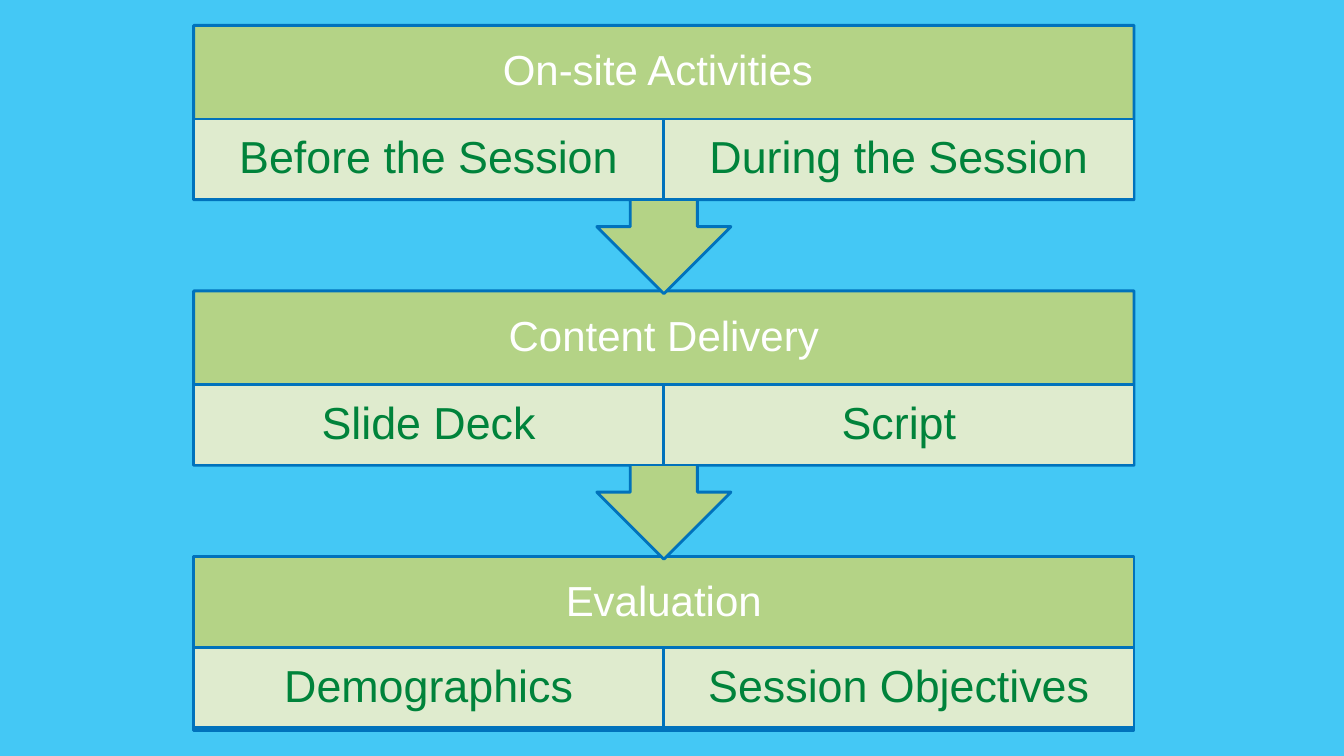
from lxml import etree
from pptx import Presentation
from pptx.dml.color import RGBColor
from pptx.enum.shapes import MSO_SHAPE
from pptx.enum.text import MSO_ANCHOR, PP_ALIGN
from pptx.oxml.ns import qn
from pptx.util import Cm, Pt

RECTANGLE = MSO_SHAPE.RECTANGLE
CALLOUT = MSO_SHAPE.UP_ARROW_CALLOUT
MIDDLE = MSO_ANCHOR.MIDDLE
CENTER = PP_ALIGN.CENTER

LEFT, WIDTH = 4.88, 23.7
TOP, STEP = 0.64, 6.69
HEADING_HEIGHT, CELL_HEIGHT = 2.36, 2.03
CALLOUT_HEIGHT, LAST_HEIGHT = 6.76, 4.39
LAST_CELL_OFFSET = 2.29

STAGES = [
    ("On-site Activities ", ("Before the Session", "During the Session")),
    ("Content Delivery", ("Slide Deck", "Script")),
    ("Evaluation", ("Demographics", "Session Objectives")),
]


def color(code):
    return RGBColor.from_string(code)


class FlowSlide:
    font = "Arial"
    background = "44C8F5"
    stage_fill = "B4D386"
    cell_fill = "E5EED7"
    cell_opacity = 89
    outline = "0072BC"
    heading_color = "FFFFFF"
    cell_color = "00833B"

    def __init__(self, deck):
        self.page = deck.slides.add_slide(deck.slide_layouts[6])
        fill = self.page.background.fill
        fill.solid()
        fill.fore_color.rgb = color(self.background)

    def shape(self, kind, left, top, width, height, fill):
        box = self.page.shapes.add_shape(
            kind, Cm(left), Cm(top), Cm(width), Cm(height))
        box.shadow.inherit = False
        box.fill.solid()
        box.fill.fore_color.rgb = color(fill)
        box.line.color.rgb = color(self.outline)
        box.line.width = Pt(2)
        return box

    def label(self, box, text, size, text_color, side, edge):
        frame = box.text_frame
        frame.word_wrap = True
        frame.vertical_anchor = MIDDLE
        frame.margin_left = frame.margin_right = Cm(side)
        frame.margin_top = frame.margin_bottom = Cm(edge)
        para = frame.paragraphs[0]
        para.alignment = CENTER
        para.line_spacing = 0.9
        span = para.add_run()
        span.text = text
        span.font.name = self.font
        span.font.size = Pt(size)
        span.font.color.rgb = color(text_color)

    def callout(self, top):
        box = self.shape(CALLOUT, LEFT, top, WIDTH, CALLOUT_HEIGHT, self.stage_fill)
        box.rotation = 180
        for index, value in enumerate((0.25, 0.25, 0.25, 0.65)):
            box.adjustments[index] = value

    def panel(self, top):
        self.shape(RECTANGLE, LEFT, top, WIDTH, LAST_HEIGHT, self.stage_fill)

    def heading(self, top, text):
        box = self.page.shapes.add_textbox(
            Cm(LEFT), Cm(top), Cm(WIDTH), Cm(HEADING_HEIGHT))
        self.label(box, text, 30, self.heading_color, 0.58, 0.58)

    def cell(self, left, top, width, text):
        box = self.shape(RECTANGLE, left, top, width, CELL_HEIGHT, self.cell_fill)
        tint = box.element.spPr.find(qn("a:solidFill"))[0]
        etree.SubElement(tint, qn("a:alpha"), val=str(self.cell_opacity * 1000))
        self.label(box, text, 32, self.cell_color, 0.64, 0.1)


def main():
    deck = Presentation()
    deck.slide_width, deck.slide_height = Cm(33.87), Cm(19.05)
    flow = FlowSlide(deck)

    # Stages from the bottom up, so each arrow tip overlaps the next stage
    last = len(STAGES) - 1
    for index, (title, parts) in reversed(list(enumerate(STAGES))):
        top = TOP + index * STEP
        if index == last:
            flow.panel(top)
            cell_top = top + LAST_CELL_OFFSET
        else:
            flow.callout(top)
            cell_top = top + HEADING_HEIGHT
        flow.heading(top, title)

        # Cells share the stage width equally
        width = WIDTH / len(parts)
        for column, part in enumerate(parts):
            flow.cell(LEFT + column * width, cell_top, width, part)

    deck.save("out.pptx")


if __name__ == "__main__":
    main()
